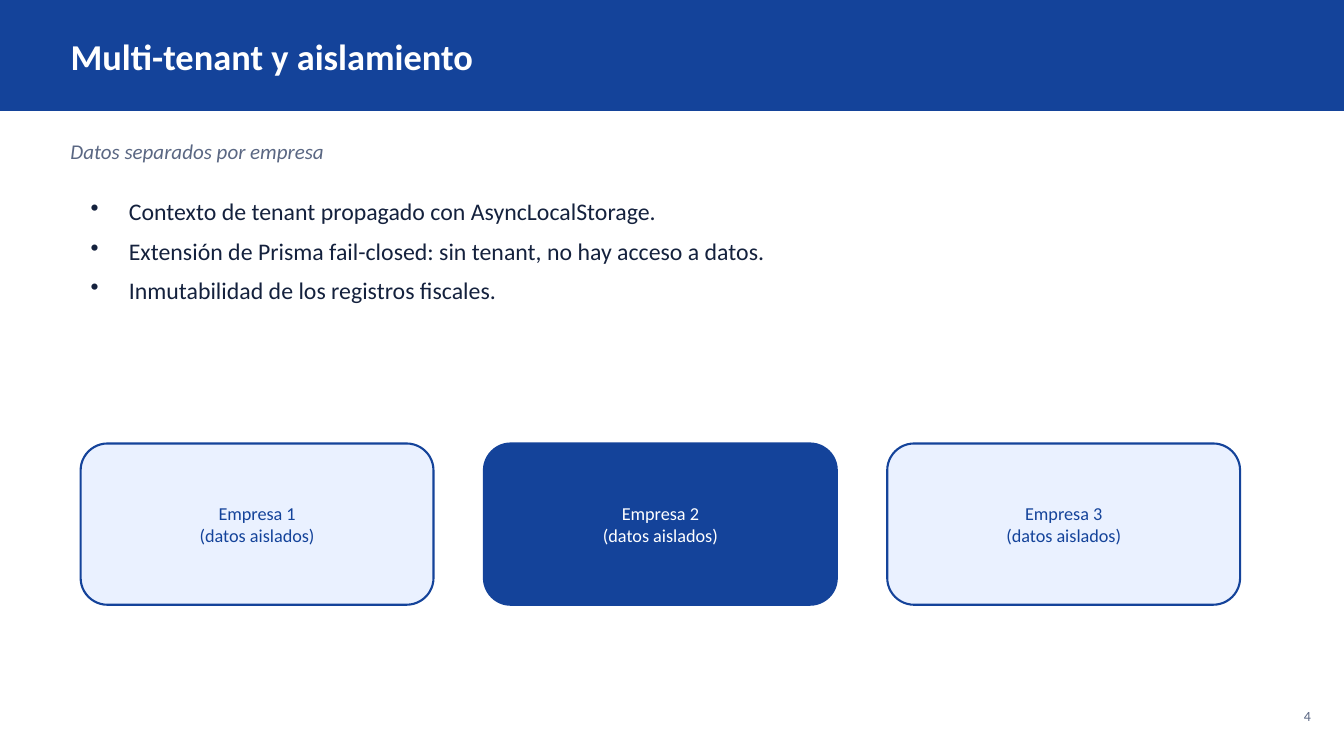
from dataclasses import dataclass

from lxml.etree import SubElement
from pptx import Presentation
from pptx.dml.color import RGBColor
from pptx.enum.shapes import MSO_SHAPE
from pptx.enum.text import MSO_ANCHOR, MSO_AUTO_SIZE, PP_ALIGN
from pptx.oxml.ns import qn
from pptx.shapes.autoshape import Shape
from pptx.slide import Slide
from pptx.util import Inches, Pt

BLUE = RGBColor(0x14, 0x43, 0x9A)
PALE_BLUE = RGBColor(0xEA, 0xF1, 0xFF)
WHITE = RGBColor(0xFF, 0xFF, 0xFF)
INK = RGBColor(0x14, 0x21, 0x3D)
GREY = RGBColor(0x5A, 0x67, 0x83)

FONT = "Calibri"
SLIDE_WIDTH = 13.33
COMPANY_LEFT, COMPANY_STEP = 0.8, 4.0
BULLET_INDENT = Inches(0.38)

POINTS = (
    "Contexto de tenant propagado con AsyncLocalStorage.",
    "Extensión de Prisma fail-closed: sin tenant, no hay acceso a datos.",
    "Inmutabilidad de los registros fiscales.",
)


@dataclass(frozen=True)
class Box:
    left: float
    top: float
    width: float
    height: float

    def lengths(self) -> tuple[Inches, ...]:
        return tuple(Inches(v) for v in (self.left, self.top, self.width, self.height))


@dataclass(frozen=True)
class TextStyle:
    size: int
    color: RGBColor
    bold: bool = False
    italic: bool = False
    align: PP_ALIGN = PP_ALIGN.LEFT
    anchor: MSO_ANCHOR = MSO_ANCHOR.MIDDLE


@dataclass(frozen=True)
class Company:
    name: str
    fill: RGBColor
    text_color: RGBColor


COMPANIES = (
    Company("Empresa 1", PALE_BLUE, BLUE),
    Company("Empresa 2", BLUE, WHITE),
    Company("Empresa 3", PALE_BLUE, BLUE),
)


def write(shape: Shape, text: str, style: TextStyle) -> None:
    frame = shape.text_frame
    frame.text = text
    frame.word_wrap = True
    frame.auto_size = MSO_AUTO_SIZE.NONE
    frame.vertical_anchor = style.anchor
    for paragraph in frame.paragraphs:
        paragraph.alignment = style.align
        for run in paragraph.runs:
            run.font.name = FONT
            run.font.size = Pt(style.size)
            run.font.bold = style.bold
            run.font.italic = style.italic
            run.font.color.rgb = style.color


def add_text(slide: Slide, box: Box, text: str, style: TextStyle) -> Shape:
    label = slide.shapes.add_textbox(*box.lengths())
    write(label, text, style)
    return label


def add_panel(slide: Slide, preset: MSO_SHAPE, box: Box, fill: RGBColor) -> Shape:
    panel = slide.shapes.add_shape(preset, *box.lengths())
    panel.shadow.inherit = False
    panel.fill.solid()
    panel.fill.fore_color.rgb = fill
    return panel


def add_header(slide: Slide, text: str) -> None:
    band = add_panel(slide, MSO_SHAPE.RECTANGLE, Box(0, 0, SLIDE_WIDTH, 1.1), BLUE)
    band.line.fill.background()
    title = slide.shapes.title
    title.left, title.top, title.width, title.height = Box(0.6, 0.18, 12.1, 0.75).lengths()
    write(title, text, TextStyle(26, WHITE, bold=True))
    # The band goes behind the title.
    title._element.addprevious(band._element)


def add_points(slide: Slide) -> None:
    style = TextStyle(17, INK, anchor=MSO_ANCHOR.TOP)
    points = add_text(slide, Box(0.8, 1.9, 11.7, 4.6), "\n".join(POINTS), style)
    for paragraph in points.text_frame.paragraphs:
        paragraph.space_after = Pt(8)
        properties = paragraph._p.get_or_add_pPr()
        properties.set("marL", str(BULLET_INDENT))
        properties.set("indent", str(-BULLET_INDENT))
        SubElement(properties, qn("a:buChar"), char="•")


def add_company(slide: Slide, index: int, company: Company) -> None:
    box = Box(COMPANY_LEFT + index * COMPANY_STEP, 4.4, 3.5, 1.6)
    card = add_panel(slide, MSO_SHAPE.ROUNDED_RECTANGLE, box, company.fill)
    card.line.color.rgb = BLUE
    card.line.width = Pt(1.5)
    style = TextStyle(13, company.text_color, align=PP_ALIGN.CENTER)
    write(card, f"{company.name}\n(datos aislados)", style)


def main() -> None:
    deck = Presentation()
    deck.slide_width, deck.slide_height = Inches(SLIDE_WIDTH), Inches(7.5)
    slide = deck.slides.add_slide(deck.slide_layouts.get_by_name("Title Only"))

    add_header(slide, "Multi-tenant y aislamiento")
    add_text(slide, Box(0.6, 1.25, 12.1, 0.5), "Datos separados por empresa",
             TextStyle(15, GREY, italic=True))
    add_points(slide)
    for index, company in enumerate(COMPANIES):
        add_company(slide, index, company)
    add_text(slide, Box(12.5, 6.9, 0.6, 0.4), "4",
             TextStyle(10, GREY, align=PP_ALIGN.RIGHT))

    deck.save("out.pptx")


if __name__ == "__main__":
    main()
